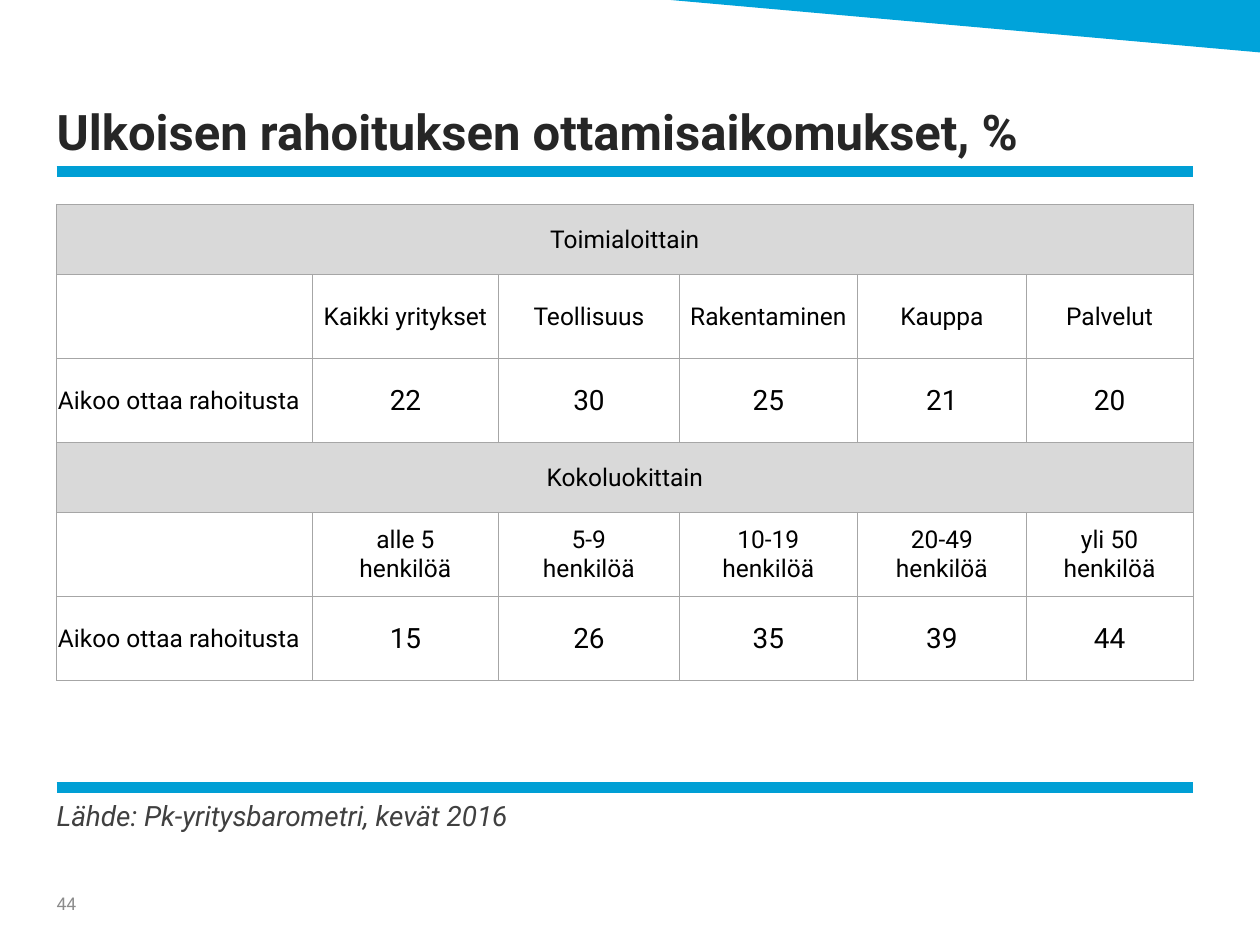
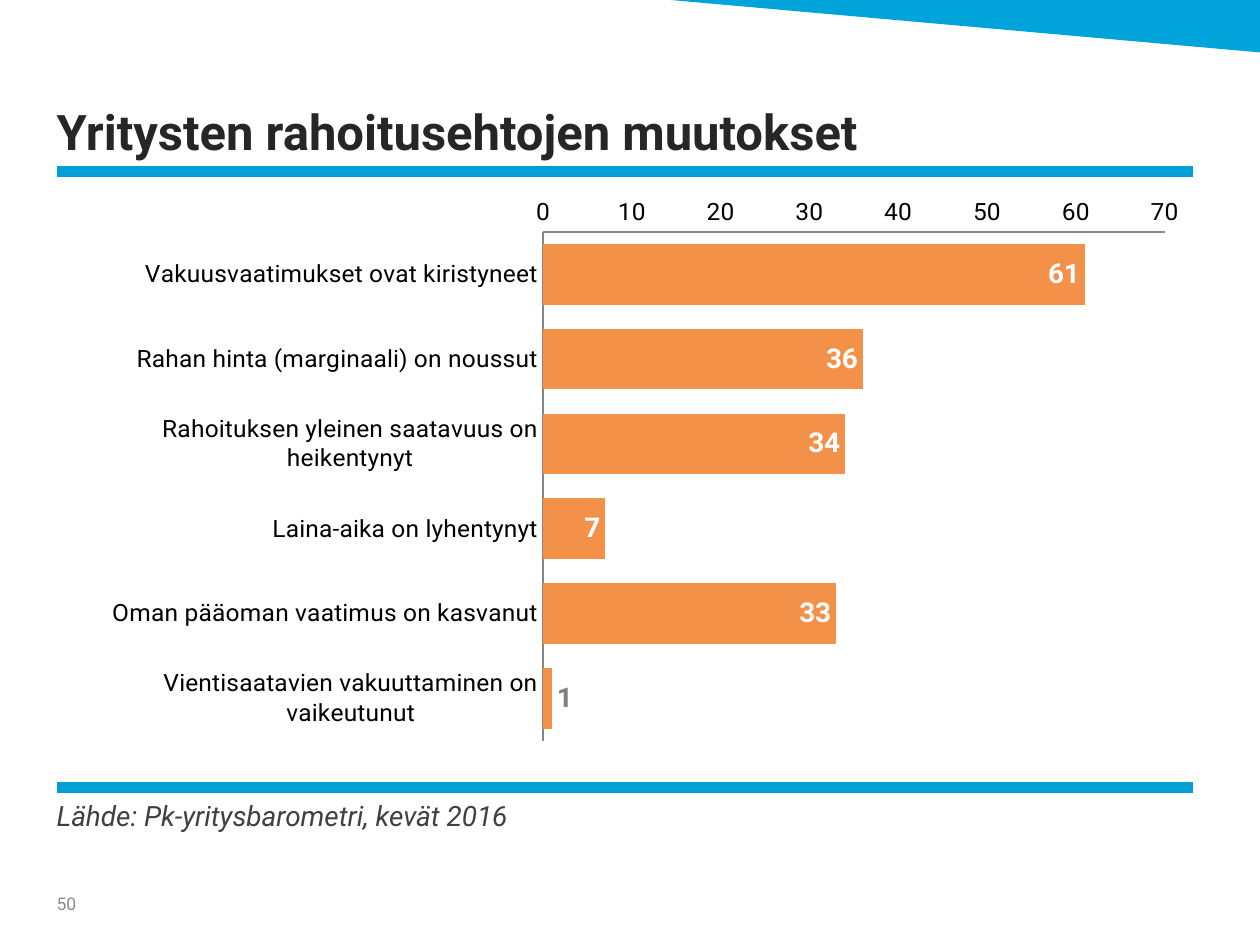
import pptx
import pptx.chart.data
import pptx.dml.color
import pptx.enum.chart
import pptx.enum.text
import pptx.oxml
import pptx.oxml.ns
import pptx.util
from lxml import etree

Pt = pptx.util.Pt
ALIGN = pptx.enum.text.PP_ALIGN
ANCHOR = pptx.enum.text.MSO_ANCHOR

# Content
SOURCE = "Lähde: Pk-yritysbarometri, kevät 2016"
TABLE_TITLE = "Ulkoisen rahoituksen ottamisaikomukset, %"
CHART_TITLE = "Yritysten rahoitusehtojen muutokset"
ROW_LABEL = "Aikoo ottaa rahoitusta"
SECTIONS = [
    ("Toimialoittain",
     ["Kaikki yritykset", "Teollisuus", "Rakentaminen", "Kauppa", "Palvelut"],
     [22, 30, 25, 21, 20]),
    ("Kokoluokittain",
     [f"{size}\nhenkilöä" for size in ("alle 5", "5-9", "10-19", "20-49", "yli 50")],
     [15, 26, 35, 39, 44]),
]
CHANGES = {
    "Vakuusvaatimukset ovat kiristyneet": 61,
    "Rahan hinta (marginaali) on noussut": 36,
    "Rahoituksen yleinen saatavuus on heikentynyt": 34,
    "Laina-aika on lyhentynyt": 7,
    "Oman pääoman vaatimus on kasvanut": 33,
    "Vientisaatavien vakuuttaminen on vaikeutunut": 1,
}

# Shared look, lengths in points
FONT = "Roboto"
BLACK, WHITE = "000000", "FFFFFF"
CORNER_BLUE, RULE_BLUE, ORANGE = "00A3DA", "009FD5", "F39149"
HEADER_GREY, BORDER_GREY, AXIS_GREY = "D9D9D9", "A6A6A6", "868686"
LEFT, WIDTH = 32.4, 649.4
RULES = (97.9, 450)
COLUMN_WIDTHS = [145.9, 106.8, 102.9, 102.2, 96.2, 95.4]
SECTION_HEIGHTS = [40, 48, 48]


def rgb(colour):
    return pptx.dml.color.RGBColor.from_string(colour)


def style_font(font, size, colour, bold=False, italic=False):
    font.name, font.size, font.bold, font.italic = FONT, Pt(size), bold, italic
    font.color.rgb = rgb(colour)


def set_box(holder, insets, anchor):
    """Set margins (left, top, right, bottom) and anchor of a text frame or cell."""
    for side, inset in zip(("left", "top", "right", "bottom"), insets):
        setattr(holder, f"margin_{side}", Pt(inset))
    holder.vertical_anchor = anchor


def write_text(frame, text, size, colour, bold=False, italic=False, align=ALIGN.LEFT):
    frame.text = text
    frame.word_wrap = True
    for para in frame.paragraphs:
        para.alignment = align
        for span in para.runs:
            style_font(span.font, size, colour, bold, italic)


def place(shape, left, top, width, height):
    shape.left, shape.top, shape.width, shape.height = map(Pt, (left, top, width, height))


def add_page(deck, title, number):
    page = deck.slides.add_slide(deck.slide_layouts[1])

    # Corner band
    outline = page.shapes.build_freeform(383, 0, scale=Pt(1))
    outline.add_line_segments([(720, 0), (720, 30.4)], close=True)
    corner = outline.convert_to_shape()
    corner.shadow.inherit = False
    corner.fill.solid()
    corner.fill.fore_color.rgb = rgb(CORNER_BLUE)
    corner.line.fill.background()

    # Rules above and below the content
    for top in RULES:
        rule = page.shapes.add_connector(
            pptx.enum.shapes.MSO_CONNECTOR.STRAIGHT,
            Pt(LEFT), Pt(top), Pt(LEFT + WIDTH), Pt(top))
        rule.line.color.rgb = rgb(RULE_BLUE)
        rule.line.width = Pt(6)
        etree.SubElement(rule._element.spPr, pptx.oxml.ns.qn("a:effectLst"))

    # Title, source and page number
    heading, source = page.placeholders[0], page.placeholders[1]
    place(heading, LEFT, 23.8, 648, 67.7)
    set_box(heading.text_frame, (0, 0, 0, 0), ANCHOR.BOTTOM)
    write_text(heading.text_frame, title, 28, "262626", bold=True)

    place(source, LEFT, 452.9, WIDTH, 31)
    set_box(source.text_frame, (0, 3.6, 0, 3.6), ANCHOR.TOP)
    write_text(source.text_frame, SOURCE, 16, "404040", italic=True)
    para = source.text_frame.paragraphs[0]
    para.space_before = Pt(0)
    properties = para._p.get_or_add_pPr()
    properties.set("marL", "0")
    properties.set("indent", "0")
    etree.SubElement(properties, pptx.oxml.ns.qn("a:buNone"))
    for shape in (heading, source):
        shape.text_frame.auto_size = pptx.enum.text.MSO_AUTO_SIZE.NONE

    box = page.shapes.add_textbox(Pt(LEFT), Pt(501.8), Pt(33.8), Pt(28.8))
    set_box(box.text_frame, (0, 3.6, 7.2, 3.6), ANCHOR.MIDDLE)
    write_text(box.text_frame, str(number), 10, "8C8C8C")
    return page


def format_cell(cell, fill):
    set_box(cell, (0.7, 0.7, 0.7, 0), ANCHOR.MIDDLE)
    properties = cell._tc.get_or_add_tcPr()
    for side in "LRTB":
        properties.append(pptx.oxml.parse_xml(
            f'<a:ln{side} {pptx.oxml.ns.nsdecls("a")} w="6350"><a:solidFill>'
            f'<a:srgbClr val="{BORDER_GREY}"/></a:solidFill></a:ln{side}>'))
    cell.fill.solid()
    cell.fill.fore_color.rgb = rgb(fill)


def add_intentions_table(page):
    heights = SECTION_HEIGHTS * len(SECTIONS)
    table = page.shapes.add_table(
        len(heights), len(COLUMN_WIDTHS),
        Pt(LEFT), Pt(116.7), Pt(WIDTH), Pt(sum(heights))).table
    table.first_row = table.horz_banding = False
    for column, width in zip(table.columns, COLUMN_WIDTHS):
        column.width = Pt(width)
    for row, height in zip(table.rows, heights):
        row.height = Pt(height)

    for index, (section, groups, shares) in enumerate(SECTIONS):
        first = index * len(SECTION_HEIGHTS)
        rows = [[section] + [""] * len(groups), [""] + groups, [ROW_LABEL] + shares]
        for offset, values in enumerate(rows):
            for column, value in enumerate(values):
                cell = table.cell(first + offset, column)
                format_cell(cell, WHITE if offset else HEADER_GREY)
                write_text(cell.text_frame, str(value),
                           16 if isinstance(value, int) else 14, BLACK,
                           align=ALIGN.LEFT if value == ROW_LABEL else ALIGN.CENTER)
                if not value:
                    cell.text_frame.paragraphs[0].font.size = Pt(14)
        table.cell(first, 0).merge(table.cell(first, len(groups)))


def add_changes_chart(page):
    kinds = pptx.enum.chart
    data = pptx.chart.data.CategoryChartData()
    data.categories = list(CHANGES)
    data.add_series("Series 1", list(CHANGES.values()))
    chart = page.shapes.add_chart(
        kinds.XL_CHART_TYPE.BAR_CLUSTERED,
        Pt(LEFT), Pt(113), Pt(WIDTH), Pt(332), data).chart
    chart.has_legend = chart.has_title = False
    style_font(chart.font, 10, BLACK)

    # Axes
    categories, values = chart.category_axis, chart.value_axis
    for axis in (categories, values):
        axis.has_major_gridlines = False
        axis.major_tick_mark = axis.minor_tick_mark = kinds.XL_TICK_MARK.NONE
        axis.format.line.color.rgb = rgb(AXIS_GREY)
        axis.format.line.width = Pt(0.75)
        style_font(axis.tick_labels.font, 14, BLACK)
    categories.reverse_order = True
    categories.crosses = kinds.XL_AXIS_CROSSES.MAXIMUM
    values.minimum_scale, values.maximum_scale, values.major_unit = 0, 70, 10

    # Bars and their labels
    plot = chart.plots[0]
    plot.gap_width = 40
    plot.vary_by_categories = False
    bars = plot.series[0]
    bars.format.fill.solid()
    bars.format.fill.fore_color.rgb = rgb(ORANGE)
    labels = bars.data_labels
    labels.show_value = True
    labels.position = kinds.XL_LABEL_POSITION.INSIDE_END
    style_font(labels.font, 16, WHITE, bold=True)
    small_label = bars.points[len(CHANGES) - 1].data_label
    style_font(small_label.font, 16, "7F7F7F", bold=True)
    small_label.position = kinds.XL_LABEL_POSITION.OUTSIDE_END

    # Inner plot area as shares of the chart
    area = chart._chartSpace.chart.plotArea
    for old in area.findall(pptx.oxml.ns.qn("c:layout")):
        area.remove(old)
    parts = {"layoutTarget": "inner", "xMode": "edge", "yMode": "edge",
             "x": 0.43, "y": 0.03, "w": 0.55, "h": 0.9}
    parts.update(x=0.428, y=0.033, w=0.547)
    inner = "".join(f'<c:{name} val="{value}"/>' for name, value in parts.items())
    area.insert(0, pptx.oxml.parse_xml(
        f'<c:layout {pptx.oxml.ns.nsdecls("c")}><c:manualLayout>{inner}'
        '</c:manualLayout></c:layout>'))


def main():
    deck = pptx.Presentation()
    deck.slide_width, deck.slide_height = Pt(720), Pt(540)
    add_intentions_table(add_page(deck, TABLE_TITLE, 44))
    add_changes_chart(add_page(deck, CHART_TITLE, 50))
    deck.save("out.pptx")


if __name__ == "__main__":
    main()
